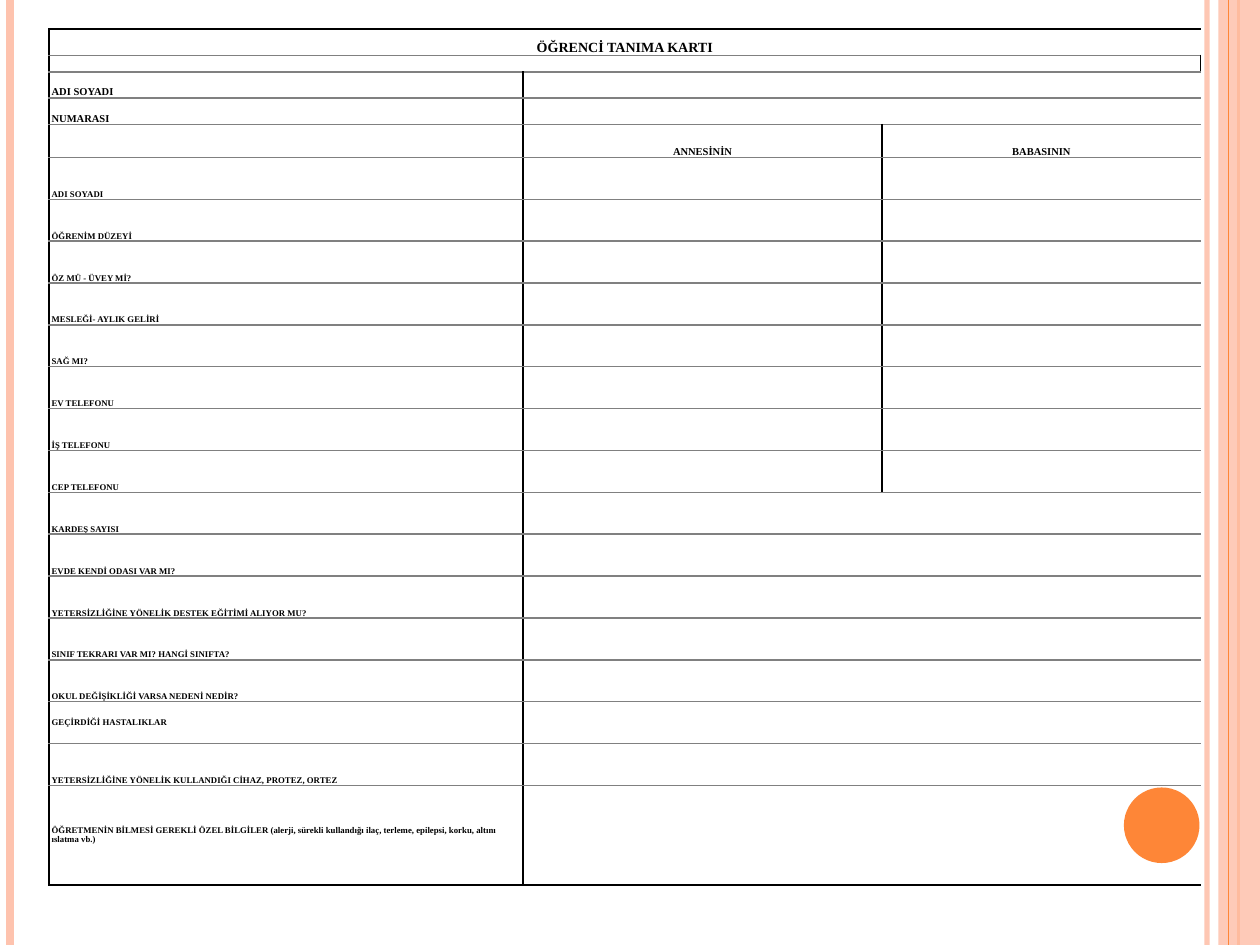
from lxml import etree
from pptx import Presentation
from pptx.dml.color import RGBColor
from pptx.enum import shapes, text
from pptx.oxml import ns
from pptx.util import Inches, Pt

THEME = {
    "font": "Times New Roman",
    "ink": "000000",
    "rule": "808080",
    "orange": "FE8637",
    "peach": "FEC3AE",
    "title": 8,
    "heading": 6,
    "label": 5,
}

STRIPES = [
    (9.58, "peach", 3, 93),
    (0.08, "peach", 4.5, 100),
    (9.83, "orange", 1.5, 100),
]
EDGE_STRIPE = (9.75, "orange", 0.75, 100)

TITLE = "ÖĞRENCİ TANIMA KARTI"
STUDENT_FIELDS = ["ADI SOYADI", "NUMARASI"]
PARENTS = ["ANNESİNİN", "BABASININ"]
PARENT_FIELDS = [
    "ADI SOYADI",
    "ÖĞRENİM DÜZEYİ",
    "ÖZ MÜ - ÜVEY Mİ?",
    "MESLEĞİ- AYLIK GELİRİ",
    "SAĞ MI?",
    "EV TELEFONU",
    "İŞ TELEFONU",
    "CEP TELEFONU",
]
GENERAL_FIELDS = [
    "KARDEŞ SAYISI",
    "EVDE KENDİ ODASI VAR MI?",
    "YETERSİZLİĞİNE YÖNELİK DESTEK EĞİTİMİ ALIYOR MU?",
    "SINIF TEKRARI VAR MI? HANGİ SINIFTA?",
    "OKUL DEĞİŞİKLİĞİ VARSA NEDENİ NEDİR?",
    "GEÇİRDİĞİ HASTALIKLAR",
    "YETERSİZLİĞİNE YÖNELİK KULLANDIĞI CİHAZ, PROTEZ, ORTEZ",
    "ÖĞRETMENİN BİLMESİ GEREKLİ ÖZEL BİLGİLER (alerji, sürekli kullandığı ilaç, "
    "terleme, epilepsi, korku, altını ıslatma vb.)",
]
MIDDLE_FIELDS = {GENERAL_FIELDS[5], GENERAL_FIELDS[7]}

COLUMNS = [3.76, 2.85, 0.14, 2.39]
TABLE_LEFT, TABLE_TOP, TABLE_HEIGHT = 0.39, 0.23, 6.8
HEAD_HEIGHTS = [0.21, 0.13, 0.21, 0.21, 0.26]
LAST_HEIGHT = 0.79

WHOLE = [(0, 3)]
SPACER = [(0, 0), (1, 2), (3, 3)]
SINGLE = [(0, 0), (1, 3)]
DOUBLE = [(0, 0), (1, 1), (2, 3)]


def color(name):
    return RGBColor.from_string(THEME[name])


def set_alpha(properties, percent):
    for element in properties.iter(ns.qn("a:srgbClr")):
        etree.SubElement(element, ns.qn("a:alpha"), val=str(percent * 1000))


def add_stripe(slide, x, name, width, alpha):
    line = slide.shapes.add_connector(
        shapes.MSO_CONNECTOR.STRAIGHT, Inches(x), 0, Inches(x), Inches(7.5))
    line.line.color.rgb = color(name)
    line.line.width = Pt(width)
    properties = line._element.spPr
    if alpha < 100:
        set_alpha(properties, alpha)
    etree.SubElement(properties, ns.qn("a:effectLst"))


def add_block(slide, kind, box, name):
    shape = slide.shapes.add_shape(kind, *map(Inches, box))
    shape.shadow.inherit = False
    shape.fill.solid()
    shape.fill.fore_color.rgb = color(name)
    shape.line.fill.background()
    return shape


def set_borders(cell, borders):
    properties = cell._tc.get_or_add_tcPr()
    for index, side in enumerate("LRTB"):
        line = etree.Element(ns.qn(f"a:ln{side}"), w=str(Pt(1)))
        name = borders.get(side)
        if name:
            fill = etree.SubElement(line, ns.qn("a:solidFill"))
            etree.SubElement(fill, ns.qn("a:srgbClr"), val=THEME[name])
        else:
            etree.SubElement(line, ns.qn("a:noFill"))
        properties.insert(index, line)


def write_cell(cell, words, size, centred, anchor):
    cell.margin_left = cell.margin_right = Inches(0.02)
    cell.margin_top = cell.margin_bottom = 0
    cell.vertical_anchor = anchor
    paragraph = cell.text_frame.paragraphs[0]
    if not words:
        etree.SubElement(paragraph._p, ns.qn("a:endParaRPr"), sz=str(THEME["label"] * 100))
        return
    paragraph.alignment = text.PP_ALIGN.CENTER if centred else text.PP_ALIGN.LEFT
    run = paragraph.add_run()
    run.text = words
    run.font.name = THEME["font"]
    run.font.size = Pt(THEME[size])
    run.font.bold = True
    run.font.color.rgb = color("ink")


def card_rows():
    rows = [(WHOLE, [TITLE], "title"), (SPACER, [], "label")]
    rows += [(SINGLE, [field], "heading") for field in STUDENT_FIELDS]
    rows.append((DOUBLE, [""] + PARENTS, "heading"))
    rows += [(DOUBLE, [field], "label") for field in PARENT_FIELDS]
    rows += [(SINGLE, [field], "label") for field in GENERAL_FIELDS]
    return rows


def add_card(slide):
    rows = card_rows()
    last_row, last_column = len(rows) - 1, len(COLUMNS) - 1
    regular_count = len(rows) - len(HEAD_HEIGHTS) - 1
    regular = (TABLE_HEIGHT - sum(HEAD_HEIGHTS) - LAST_HEIGHT) / regular_count
    heights = HEAD_HEIGHTS + [regular] * regular_count + [LAST_HEIGHT]
    table = slide.shapes.add_table(
        len(rows), len(COLUMNS), Inches(TABLE_LEFT), Inches(TABLE_TOP),
        Inches(sum(COLUMNS)), Inches(TABLE_HEIGHT)).table
    table.first_row = table.horz_banding = False
    for column, width in zip(table.columns, COLUMNS):
        column.width = Inches(width)
    for row, height in zip(table.rows, heights):
        row.height = Inches(height)

    for r, (spans, words, size) in enumerate(rows):
        for position, (first, last) in enumerate(spans):
            content = words[position] if position < len(words) else ""
            anchor = (text.MSO_ANCHOR.MIDDLE if content in MIDDLE_FIELDS
                      else text.MSO_ANCHOR.BOTTOM)
            centred = content == TITLE or content in PARENTS
            for c in range(first, last + 1):
                cell = table.cell(r, c)
                cell.fill.background()
                write_cell(cell, content if c == first else "", size, centred, anchor)
                borders = {"T": "rule" if r else "ink",
                           "B": "rule" if r < last_row else "ink"}
                inner = spans is not SPACER
                if c == 0 or (c == first and inner):
                    borders["L"] = "ink"
                if c == last_column or (c == last and inner):
                    borders["R"] = "ink"
                set_borders(cell, borders)
            if last > first:
                table.cell(r, first).merge(table.cell(r, last))


def main():
    presentation = Presentation()
    presentation.slide_width, presentation.slide_height = Inches(10), Inches(7.5)
    slide = presentation.slides.add_slide(presentation.slide_layouts[6])
    for stripe in STRIPES:
        add_stripe(slide, *stripe)
    band = add_block(slide, shapes.MSO_SHAPE.RECTANGLE, (9.67, 0, 0.33, 7.5), "peach")
    set_alpha(band._element.spPr, 87)
    add_stripe(slide, *EDGE_STRIPE)
    add_block(slide, shapes.MSO_SHAPE.OVAL, (8.92, 6.25, 0.6, 0.6), "orange")
    add_card(slide)
    presentation.save("out.pptx")


if __name__ == "__main__":
    main()
